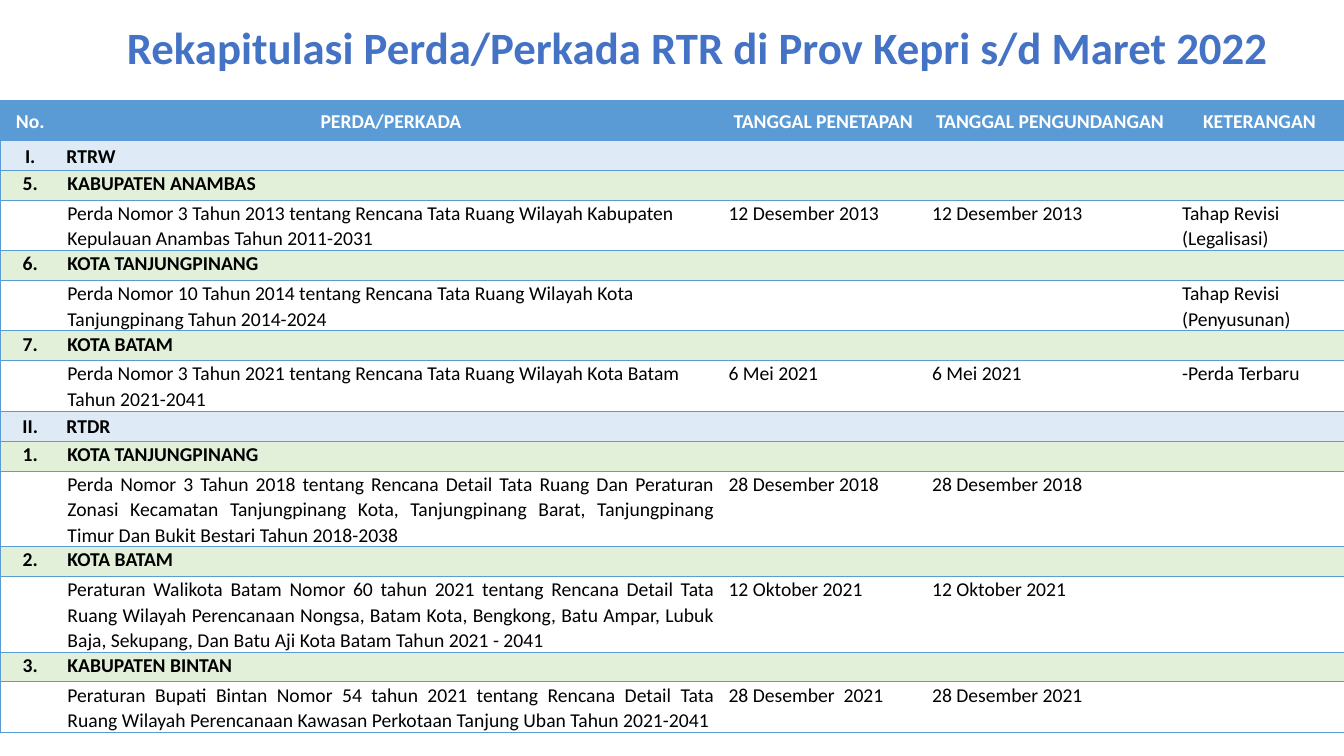
from lxml import etree
from pptx import Presentation
from pptx.dml.color import RGBColor
from pptx.enum.text import MSO_ANCHOR, PP_ALIGN
from pptx.oxml.ns import qn
from pptx.util import Pt

LEFT, MID, JUST = PP_ALIGN.LEFT, PP_ALIGN.CENTER, PP_ALIGN.JUSTIFY
TOP, CENTER = MSO_ANCHOR.TOP, MSO_ANCHOR.MIDDLE

TITLE = "Rekapitulasi Perda/Perkada RTR di Prov Kepri s/d Maret 2022"
ROWS = [
    ("head", "No.", "PERDA/PERKADA", "TANGGAL PENETAPAN", "TANGGAL PENGUNDANGAN", "KETERANGAN"),
    ("part", "I.", "RTRW"),
    ("area", "5.", "KABUPATEN ANAMBAS"),
    ("rule", "", "Perda Nomor 3 Tahun 2013 tentang Rencana Tata Ruang Wilayah Kabupaten "
     "Kepulauan Anambas Tahun 2011-2031",
     "12 Desember 2013", "12 Desember 2013", "Tahap Revisi (Legalisasi)"),
    ("area", "6.", "KOTA TANJUNGPINANG"),
    ("rule", "", "Perda Nomor 10 Tahun 2014 tentang Rencana Tata Ruang Wilayah Kota "
     "Tanjungpinang Tahun 2014-2024", "", "", "Tahap Revisi (Penyusunan)"),
    ("area", "7.", "KOTA BATAM"),
    ("rule", "", "Perda Nomor 3 Tahun 2021 tentang Rencana Tata Ruang Wilayah Kota Batam "
     "Tahun 2021-2041", "6 Mei 2021", "6 Mei 2021", "-Perda Terbaru"),
    ("part", "II.", "RTDR"),
    ("area", "1.", "KOTA TANJUNGPINANG"),
    ("long", "", "Perda Nomor 3 Tahun 2018 tentang Rencana Detail Tata Ruang Dan Peraturan "
     "Zonasi Kecamatan Tanjungpinang Kota, Tanjungpinang Barat, Tanjungpinang Timur "
     "Dan Bukit Bestari Tahun 2018-2038", "28 Desember 2018", "28 Desember 2018"),
    ("area", "2.", "KOTA BATAM"),
    ("long", "", "Peraturan Walikota Batam Nomor 60 tahun 2021 tentang Rencana Detail Tata "
     "Ruang Wilayah Perencanaan Nongsa, Batam Kota, Bengkong, Batu Ampar, Lubuk Baja, "
     "Sekupang, Dan Batu Aji Kota Batam Tahun 2021 - 2041",
     "12 Oktober 2021", "12 Oktober 2021"),
    ("area", "3.", "KABUPATEN BINTAN"),
    ("last", "", "Peraturan Bupati Bintan Nomor 54 tahun 2021 tentang Rencana Detail Tata "
     "Ruang Wilayah Perencanaan Kawasan Perkotaan Tanjung Uban Tahun 2021-2041",
     "28 Desember  2021", "28 Desember 2021"),
]
COLS = [43.2, 472.2, 145.4, 178.6, 120.6]

THEME = {
    "font": "Calibri", "title": 32, "body": 14,
    "blue": "4472C4", "line": "5B9BD5", "white": "FFFFFF", "black": "000000",
    "part": "DEEBF7", "area": "E2F0D9",
}
KINDS = {
    "head": {"high": 28.5, "fill": "line", "ink": "white", "bold": True, "text": MID},
    "part": {"high": 21.4, "fill": "part", "ink": "black", "bold": True, "text": LEFT},
    "area": {"high": 21.4, "fill": "area", "ink": "black", "bold": True, "text": LEFT},
    "rule": {"high": 35.8, "fill": None, "ink": "black", "bold": False, "text": LEFT},
    "long": {"high": 53.9, "fill": None, "ink": "black", "bold": False, "text": JUST},
    "last": {"high": 35.8, "fill": None, "ink": "black", "bold": False, "text": JUST},
}


def tint(name):
    return RGBColor.from_string(THEME[name])


def write(para, text, size, ink, bold):
    run = para.add_run()
    run.text = text
    font = run.font
    font.name, font.size, font.bold = THEME["font"], Pt(THEME[size]), bold
    font.color.rgb = tint(ink)


def edge(cell, col):
    props = cell._tc.get_or_add_tcPr()
    shown = {"lnL": col == 0, "lnR": col == len(COLS) - 1, "lnT": True, "lnB": True}
    for tag, on in shown.items():
        line = etree.SubElement(props, qn("a:" + tag), w=str(Pt(0.5)))
        if on:
            fill = etree.SubElement(line, qn("a:solidFill"))
            etree.SubElement(fill, qn("a:srgbClr"), val=THEME["line"])
        else:
            etree.SubElement(line, qn("a:noFill"))


def fill_cell(cell, col, kind, text):
    look = KINDS[kind]
    wide = kind in ("head", "part")
    cell.margin_left = cell.margin_right = Pt(4.3 if wide else 5)
    cell.margin_top = cell.margin_bottom = 0
    cell.vertical_anchor = CENTER if wide else TOP
    edge(cell, col)
    if look["fill"]:
        cell.fill.solid()
        cell.fill.fore_color.rgb = tint(look["fill"])
    else:
        cell.fill.background()
    para = cell.text_frame.paragraphs[0]
    if not text:
        etree.SubElement(para._p, qn("a:endParaRPr"), sz=str(THEME["body"] * 100))
        return
    para.alignment = MID if col == 0 else look["text"] if col == 1 or kind == "head" else LEFT
    para.line_spacing = 1.1 if wide else 1.07
    para.space_after = Pt(2 if wide else 8)
    write(para, text, "body", look["ink"], look["bold"])


def main():
    deck = Presentation()
    deck.slide_width, deck.slide_height = Pt(960), Pt(540)
    slide = deck.slides.add_slide(deck.slide_layouts[6])

    box = slide.shapes.add_textbox(Pt(83.5), Pt(10.8), Pt(850.3), Pt(46))
    box.text_frame.word_wrap = True
    write(box.text_frame.paragraphs[0], TITLE, "title", "blue", True)

    high = sum(KINDS[row[0]]["high"] for row in ROWS)
    table = slide.shapes.add_table(
        len(ROWS), len(COLS), 0, Pt(71.7), Pt(sum(COLS)), Pt(high)).table
    table.horz_banding = False
    table.first_row = False
    for col, width in enumerate(COLS):
        table.columns[col].width = Pt(width)
    for num, (kind, *texts) in enumerate(ROWS):
        table.rows[num].height = Pt(KINDS[kind]["high"])
        texts += [""] * (len(COLS) - len(texts))
        for col, text in enumerate(texts):
            fill_cell(table.cell(num, col), col, kind, text)

    deck.save("out.pptx")


if __name__ == "__main__":
    main()
